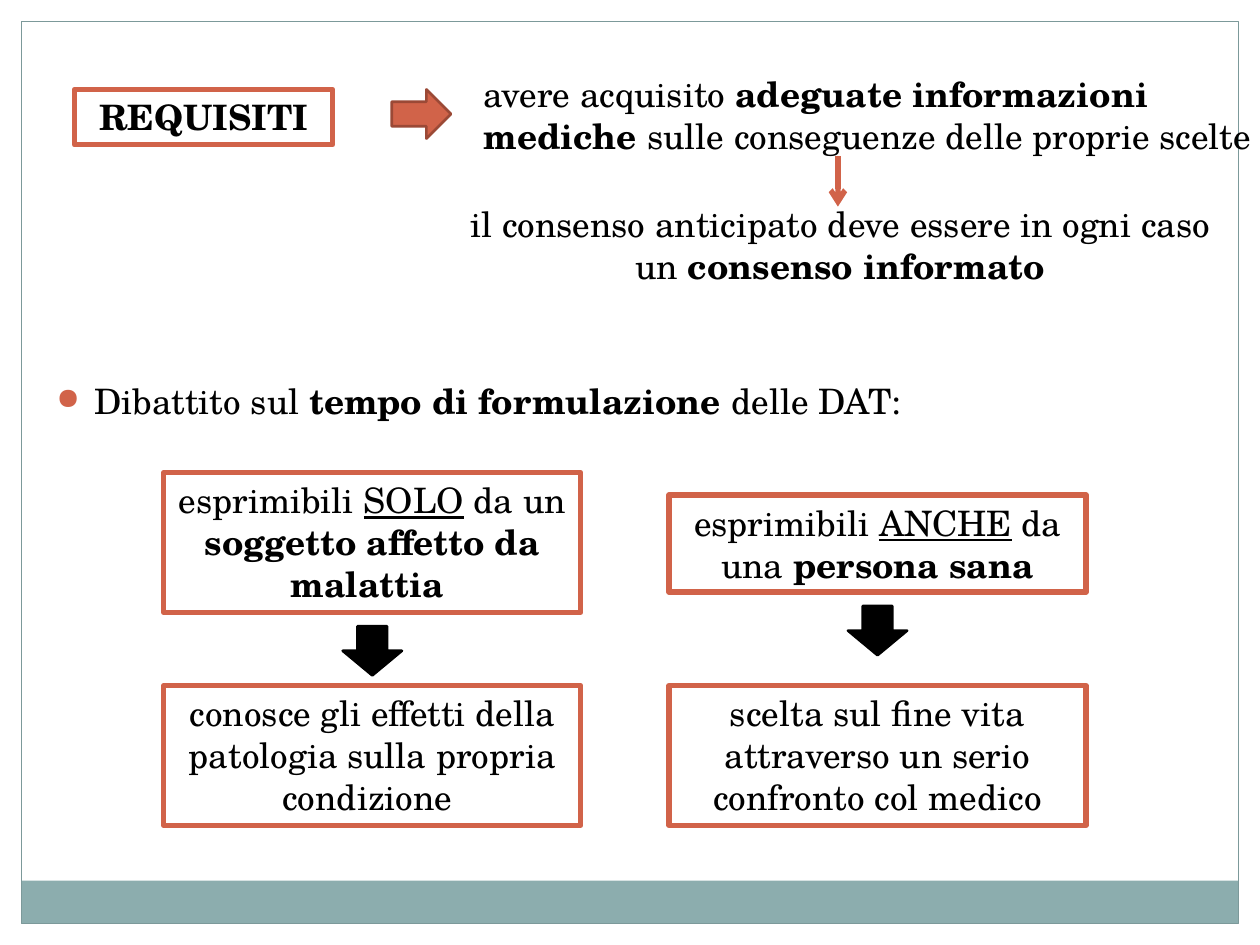
import dataclasses

import pptx
import pptx.util
import pptx.dml.color
import pptx.enum.shapes
import pptx.enum.text
import pptx.oxml
import pptx.oxml.ns

RGB = pptx.dml.color.RGBColor
SHAPE = pptx.enum.shapes.MSO_SHAPE
ALIGN = pptx.enum.text.PP_ALIGN

BLACK = RGB(0x00, 0x00, 0x00)
WHITE = RGB(0xFF, 0xFF, 0xFF)
RUST = RGB(0xD1, 0x63, 0x49)
DARK_RUST = RGB(0x9B, 0x49, 0x36)
TEAL = RGB(0x8C, 0xAD, 0xAE)
FRAME_TEAL = RGB(0x7C, 0x99, 0x9A)

FONT = "TeX Gyre Schola"
COLUMNS, ROWS = 100, 75
CELL = 0.1
PLAIN, BOLD, UNDERLINED = "plain", "bold", "underlined"


@dataclasses.dataclass
class Box:
    left: float
    top: float
    width: float
    height: float

    def inset(self, left, top, width, height):
        return Box(self.left + left, self.top + top, width, height)

    def emu(self):
        return [cells(n) for n in (self.left, self.top, self.width, self.height)]


def cells(count):
    return pptx.util.Inches(count * CELL)


def add_figure(slide, box, kind, fill=None, line=None, weight=0):
    figure = slide.shapes.add_shape(kind, *box.emu())
    figure.shadow.inherit = False
    if fill is None:
        figure.fill.background()
    else:
        figure.fill.solid()
        figure.fill.fore_color.rgb = fill
    if line is None:
        figure.line.fill.background()
    else:
        figure.line.color.rgb = line
        figure.line.width = pptx.util.Pt(weight)
    return figure


def write(holder, runs, align):
    frame = holder.text_frame
    frame.word_wrap = True
    frame.vertical_anchor = pptx.enum.text.MSO_ANCHOR.TOP
    paragraph = frame.paragraphs[0]
    paragraph.alignment = align
    for words, style in runs:
        run = paragraph.add_run()
        run.text = words
        run.font.name = FONT
        run.font.size = pptx.util.Pt(20)
        run.font.color.rgb = BLACK
        run.font.bold = style == BOLD
        run.font.underline = style == UNDERLINED
    return paragraph


def add_statement(slide, box, runs, align=ALIGN.LEFT):
    return write(slide.shapes.add_textbox(*box.emu()), runs, align)


def add_outlined(slide, box, runs, fill=None):
    write(add_figure(slide, box, SHAPE.RECTANGLE, fill, RUST, 3), runs, ALIGN.CENTER)


def add_thin_arrow(slide, box):
    left, top, width, height = box.emu()
    arrow = slide.shapes.add_connector(
        pptx.enum.shapes.MSO_CONNECTOR.STRAIGHT, left, top, left + width, top + height)
    arrow.line.color.rgb = RUST
    arrow.line.width = pptx.util.Pt(3)
    namespace = pptx.oxml.ns.nsdecls("a")
    properties = arrow._element.spPr
    properties.find(pptx.oxml.ns.qn("a:ln")).append(
        pptx.oxml.parse_xml(f'<a:tailEnd {namespace} type="arrow"/>'))
    properties.append(pptx.oxml.parse_xml(f"<a:effectLst {namespace}/>"))


def draw_frame(slide, box):
    add_figure(slide, box.inset(0, 68.2, box.width, 3.4), SHAPE.RECTANGLE, TEAL)
    add_figure(slide, box, SHAPE.RECTANGLE, None, FRAME_TEAL, 0.75)


def draw_requirements(slide, box):
    add_outlined(slide, box.inset(0, 1.8, 20.5, 4.4), [("REQUISITI", BOLD)], WHITE)
    add_statement(slide, box.inset(31.5, 0, 64.2, 7.7), [
        ("avere acquisito ", PLAIN),
        ("adeguate informazioni mediche ", BOLD),
        ("sulle conseguenze delle proprie scelte", PLAIN)])
    add_figure(slide, box.inset(25.2, 1.8, 4.7, 3.9), SHAPE.RIGHT_ARROW, RUST, DARK_RUST, 1.5)
    add_thin_arrow(slide, box.inset(60.6, 7.1, 0, 4))
    add_statement(slide, box.inset(28.7, 10.3, 64.2, 7.7), [
        ("il consenso anticipato deve essere in ogni caso un ", PLAIN),
        ("consenso informato", BOLD)], ALIGN.CENTER)


def draw_debate(slide, box):
    paragraph = add_statement(slide, box, [
        ("Dibattito sul ", PLAIN),
        ("tempo di formulazione ", BOLD),
        ("delle DAT:", PLAIN)])
    properties = paragraph._p.get_or_add_pPr()
    indent = cells(3)
    properties.set("marL", str(indent))
    properties.set("indent", str(-indent))
    namespace = pptx.oxml.ns.nsdecls("a")
    for xml in (
        f'<a:spcBef {namespace}><a:spcPct val="20000"/></a:spcBef>',
        f'<a:buClr {namespace}><a:srgbClr val="{RUST}"/></a:buClr>',
        f'<a:buSzPct {namespace} val="85000"/>',
        f'<a:buChar {namespace} char="●"/>',
    ):
        properties.append(pptx.oxml.parse_xml(xml))


def draw_position(slide, box, claim, claim_top, claim_height, consequence):
    claim_box = box.inset(0, claim_top, box.width, claim_height)
    add_outlined(slide, claim_box, claim)
    arrow_width = 4.7
    arrow_left = (box.width - arrow_width) / 2
    add_figure(
        slide, claim_box.inset(arrow_left, claim_height + 1.1, arrow_width, 3.9),
        SHAPE.DOWN_ARROW, BLACK, BLACK, 1.5)
    add_outlined(slide, box.inset(0, box.height - 11.1, box.width, 11.1), [(consequence, PLAIN)])


def main():
    deck = pptx.Presentation()
    deck.slide_width, deck.slide_height = cells(COLUMNS), cells(ROWS)
    slide = deck.slides.add_slide(deck.slide_layouts[6])

    margin = 1.7
    draw_frame(slide, Box(margin, margin, COLUMNS - 2 * margin, ROWS - 2 * margin))
    draw_requirements(slide, Box(5.9, 5.3, 95.7, 18))
    draw_debate(slide, Box(3.5, 29.6, 93, 6.3))

    positions = [
        ([("esprimibili ", PLAIN), ("SOLO", UNDERLINED), (" da un ", PLAIN),
          ("soggetto affetto da malattia ", BOLD)], 0, 11.1,
         "conosce gli effetti della patologia sulla propria condizione "),
        ([("esprimibili ", PLAIN), ("ANCHE", UNDERLINED), (" da una ", PLAIN),
          ("persona sana", BOLD)], 1.8, 7.7,
         "scelta sul fine vita attraverso un serio confronto col medico"),
    ]
    for index, position in enumerate(positions):
        draw_position(slide, Box(13 + 40.1 * index, 37.5, 33.1, 28), *position)

    deck.save("out.pptx")


if __name__ == "__main__":
    main()
